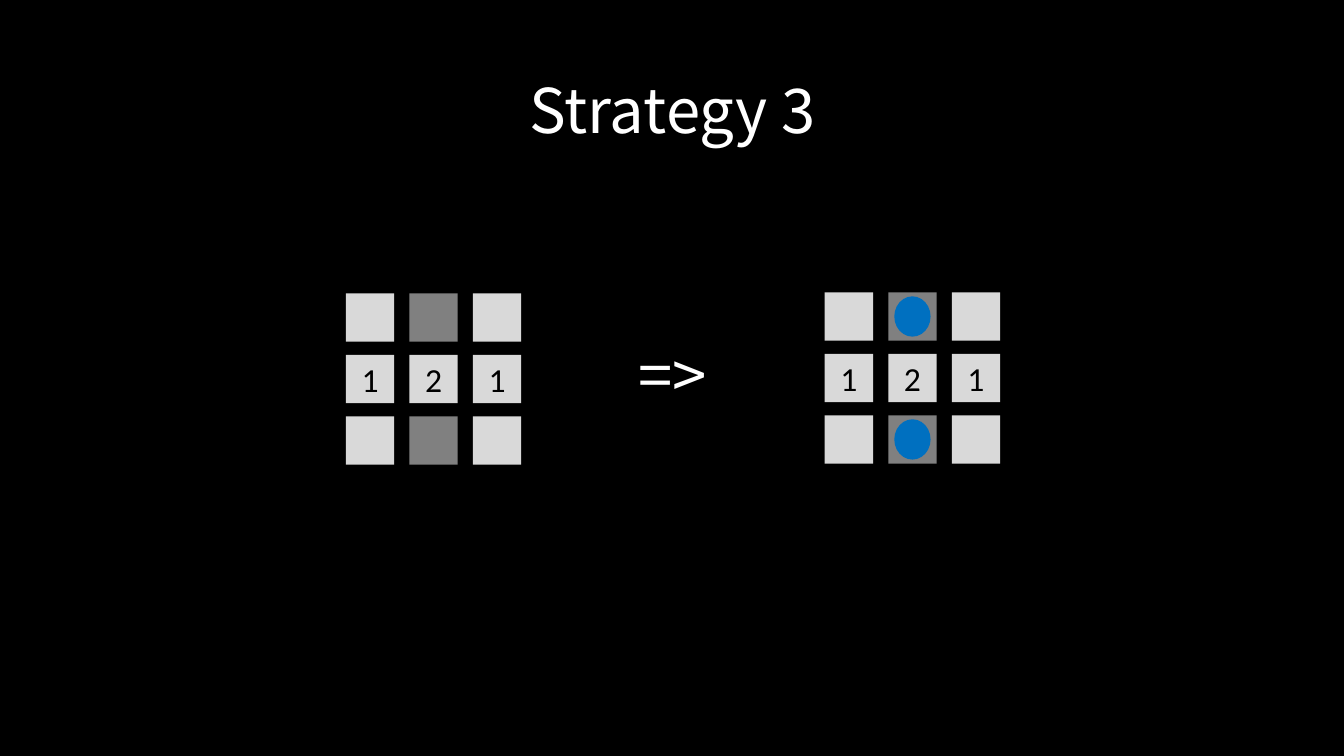
from dataclasses import dataclass

from pptx import Presentation
from pptx.dml.color import RGBColor
from pptx.enum.shapes import MSO_SHAPE
from pptx.enum.text import MSO_ANCHOR, PP_ALIGN
from pptx.shapes.autoshape import Shape
from pptx.shapes.group import GroupShape
from pptx.slide import Slide
from pptx.util import Inches, Pt

RECTANGLE = MSO_SHAPE.RECTANGLE
OVAL = MSO_SHAPE.OVAL
MIDDLE = MSO_ANCHOR.MIDDLE
CENTER = PP_ALIGN.CENTER

BLACK = RGBColor(0x00, 0x00, 0x00)
WHITE = RGBColor(0xFF, 0xFF, 0xFF)
OPEN_GRAY = RGBColor(0xD9, 0xD9, 0xD9)
HIDDEN_GRAY = RGBColor(0x80, 0x80, 0x80)
MINE_BLUE = RGBColor(0x00, 0x70, 0xC0)

HEADING_FONT = "Noto Sans CJK KR"
DIGIT_FONT = "Calibri"

CELL_SIZE = 0.48
COLUMN_STEP = 0.63
ROW_STEP = 0.61
MINE_WIDTH = 0.36
MINE_HEIGHT = 0.4
HIDDEN = "#"
CELL_ROWS = (
    ("", HIDDEN, ""),
    ("1", "2", "1"),
    ("", HIDDEN, ""),
)


@dataclass(frozen=True)
class Heading:
    text: str
    left: float
    top: float
    width: float
    height: float


@dataclass(frozen=True)
class Board:
    left: float
    top: float
    shows_mines: bool


HEADINGS = (
    Heading("Strategy 3", 0.92, 0.4, 11.5, 1.45),
    Heading("=>", 5.97, 3.03, 1.41, 1.45),
)
BOARDS = (
    Board(3.43, 2.91, False),
    Board(8.18, 2.9, True),
)


def write_text(shape: Shape, text: str, font_name: str, size: int, color: RGBColor) -> None:
    frame = shape.text_frame
    frame.word_wrap = True
    frame.vertical_anchor = MIDDLE
    paragraph = frame.paragraphs[0]
    paragraph.text = text
    paragraph.alignment = CENTER
    paragraph.font.name = font_name
    paragraph.font.size = Pt(size)
    paragraph.font.color.rgb = color


def add_heading(slide: Slide, heading: Heading) -> None:
    text_box = slide.shapes.add_textbox(
        Inches(heading.left), Inches(heading.top), Inches(heading.width), Inches(heading.height)
    )
    write_text(text_box, heading.text, HEADING_FONT, 44, WHITE)
    text_box.text_frame.paragraphs[0].line_spacing = 0.9


def add_piece(
    group: GroupShape,
    kind: MSO_SHAPE,
    left: float,
    top: float,
    width: float,
    height: float,
    color: RGBColor,
) -> Shape:
    shape = group.shapes.add_shape(kind, Inches(left), Inches(top), Inches(width), Inches(height))
    shape.shadow.inherit = False
    shape.fill.solid()
    shape.fill.fore_color.rgb = color
    shape.line.fill.background()
    return shape


def add_board(slide: Slide, board: Board) -> None:
    group = slide.shapes.add_group_shape()
    for row, labels in enumerate(CELL_ROWS):
        for column, label in enumerate(labels):
            left = board.left + column * COLUMN_STEP
            top = board.top + row * ROW_STEP
            color = HIDDEN_GRAY if label == HIDDEN else OPEN_GRAY
            cell = add_piece(group, RECTANGLE, left, top, CELL_SIZE, CELL_SIZE, color)
            if label == HIDDEN and board.shows_mines:
                mine_left = left + (CELL_SIZE - MINE_WIDTH) / 2
                mine_top = top + (CELL_SIZE - MINE_HEIGHT) / 2
                add_piece(group, OVAL, mine_left, mine_top, MINE_WIDTH, MINE_HEIGHT, MINE_BLUE)
            elif label and label != HIDDEN:
                write_text(cell, label, DIGIT_FONT, 24, BLACK)


def main() -> None:
    presentation = Presentation()
    presentation.slide_width = Inches(13.33)
    presentation.slide_height = Inches(7.5)
    slide = presentation.slides.add_slide(presentation.slide_layouts[6])
    background = slide.background.fill
    background.solid()
    background.fore_color.rgb = BLACK
    for board in BOARDS:
        add_board(slide, board)
    for heading in HEADINGS:
        add_heading(slide, heading)
    presentation.save("out.pptx")


if __name__ == "__main__":
    main()
